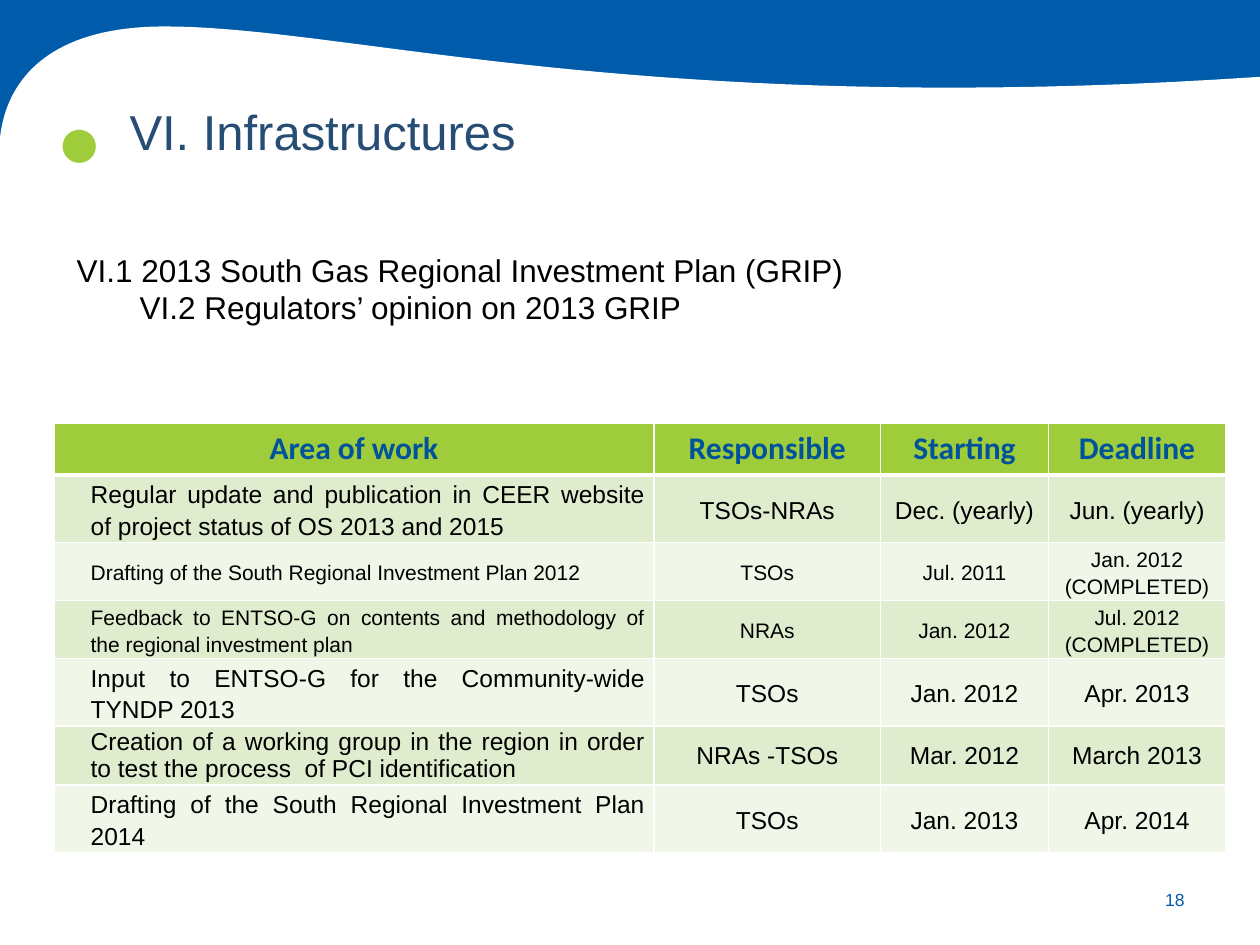
from lxml.etree import SubElement
from pptx import Presentation
from pptx.dml.color import RGBColor
from pptx.enum.shapes import MSO_SHAPE
from pptx.enum.text import MSO_ANCHOR, PP_ALIGN
from pptx.oxml import parse_xml
from pptx.oxml.ns import nsdecls
from pptx.util import Inches, Pt

BLUE, GREEN, WHITE, BLACK = "005BAB", "9ECC3B", "FFFFFF", "000000"
NAVY, HEAD, PALE, MIST = "264D74", "00529B", "DFECCE", "F0F6E8"
COLS, ROWS = 10, 7.5

WIDTHS = [4.76, 1.8, 1.33, 1.41]
TITLES = ["Area of work", "Responsible", "Starting", "Deadline"]
# Text size, line spacing, cell texts
TASKS = [
    (14, 1.15, ["Regular update and publication in CEER website of project status of OS 2013 and 2015",
                "TSOs-NRAs", "Dec. (yearly)", "Jun. (yearly)"]),
    (12, 1.15, ["Drafting of the South Regional Investment Plan 2012",
                "TSOs", "Jul. 2011", "Jan. 2012 (COMPLETED)"]),
    (12, 1.15, ["Feedback to ENTSO-G on contents and methodology of the regional investment plan",
                "NRAs", "Jan. 2012", "Jul. 2012 (COMPLETED)"]),
    (14, 1.15, ["Input to ENTSO-G for the Community-wide TYNDP 2013",
                "TSOs", "Jan. 2012", "Apr. 2013"]),
    (14, 1, ["Creation of a working group in the region in order to test the process  of PCI identification",
             "NRAs -TSOs", "Mar. 2012", "March 2013"]),
    (14, 1.15, ["Drafting of the South Regional Investment Plan 2014",
                "TSOs", "Jan. 2013", "Apr. 2014"]),
]


def color(code):
    return RGBColor.from_string(code)


def curve(start, *bends, steps=40):
    """Sample a chain of cubic bends, each given as two handles and an end."""
    points = [start]
    for bend in bends:
        a, b, c, d = points[-1], *bend
        for i in range(1, steps + 1):
            t = i / steps
            u = 1 - t
            points.append(tuple(u**3 * p + 3 * u * u * t * q + 3 * u * t * t * r + t**3 * s
                                for p, q, r, s in zip(a, b, c, d)))
    return points


class Deck:
    """Style and current slide; lengths are grid columns and rows."""

    def __init__(self, font="Arial"):
        self.font = font
        self.file = Presentation()
        self.file.slide_width, self.file.slide_height = Inches(COLS), Inches(ROWS)
        self.col = self.file.slide_width / COLS
        self.row = self.file.slide_height / ROWS
        self.slide = self.file.slides.add_slide(self.file.slide_layouts[6])
        self.shapes = self.slide.shapes

    def place(self, x, y, w, h):
        return [round(n) for n in (x * self.col, y * self.row, w * self.col, h * self.row)]

    def paint(self, shape, fill):
        shape.shadow.inherit = False
        shape.fill.solid()
        shape.fill.fore_color.rgb = color(fill)
        shape.line.fill.background()

    def band(self, box, fill):
        self.paint(self.shapes.add_shape(MSO_SHAPE.RECTANGLE, *self.place(*box)), fill)

    def outline(self, points, fill):
        # The builder rounds its points to whole units, so scale them first
        spots = [(round(x * self.col), round(y * self.row)) for x, y in points]
        pen = self.shapes.build_freeform(*spots[0])
        pen.add_line_segments(spots[1:], close=True)
        self.paint(pen.convert_to_shape(), fill)

    def style(self, para, size, ink, align, bold=False, font=None):
        para.alignment = align
        for run in para.runs:
            run.font.name = font or self.font
            run.font.size, run.font.bold = Pt(size), bold
            run.font.color.rgb = color(ink)

    def text(self, box, words, size, ink, align=PP_ALIGN.LEFT,
             anchor=MSO_ANCHOR.TOP, wrap=True):
        frame = self.shapes.add_textbox(*self.place(*box)).text_frame
        frame.word_wrap, frame.vertical_anchor = wrap, anchor
        frame.text = words
        for para in frame.paragraphs:
            self.style(para, size, ink, align)
        return frame.paragraphs

    def indent(self, para, left, first=0):
        props = para._p.get_or_add_pPr()
        props.set("marL", str(round(left * self.col)))
        props.set("indent", str(round(first * self.col)))

    def border(self, cell, base):
        """Draw white cell edges, with the bottom one base points wide."""
        props = cell._tc.get_or_add_tcPr()
        for i, side in enumerate("LRTB"):
            width = Pt(base if side == "B" else 1)
            edge = parse_xml(f'<a:ln{side} {nsdecls("a")} w="{width}"/>')
            tag = edge.tag[:edge.tag.index("}") + 1]
            fill = SubElement(edge, tag + "solidFill")
            SubElement(fill, tag + "srgbClr", val=WHITE)
            props.insert(i, edge)

    def cell(self, cell, words, fill, base=1):
        cell.text = words
        cell.fill.solid()
        cell.fill.fore_color.rgb = color(fill)
        self.border(cell, base)
        return cell.text_frame.paragraphs[0]

    def table(self, x, y, widths, height, titles, tasks):
        count = len(tasks) + 1
        box = self.place(x, y, sum(widths), 0.41 * count)
        frame = self.shapes.add_table(count, len(widths), *box)
        grid = frame.table
        for col, width in zip(grid.columns, widths):
            col.width = round(width * self.col)
        for i, title in enumerate(titles):
            para = self.cell(grid.cell(0, i), title, GREEN, base=3)
            self.style(para, 18, HEAD, PP_ALIGN.CENTER, True, "Calibri")
        for r, (size, space, words) in enumerate(tasks, 1):
            for c, word in enumerate(words):
                cell = grid.cell(r, c)
                para = self.cell(cell, word, PALE if r % 2 else MIST)
                cell.vertical_anchor = MSO_ANCHOR.MIDDLE
                cell.margin_left = cell.margin_right = round(0.07 * self.col)
                cell.margin_top = cell.margin_bottom = 0
                self.style(para, size, BLACK, PP_ALIGN.CENTER if c else PP_ALIGN.JUSTIFY)
                para.line_spacing = float(space)
                if c == 0:
                    self.indent(para, 0.22)
        frame.height = round(height * self.row)


def main():
    deck = Deck()
    deck.band((0, 0, COLS, 1.15), BLUE)
    wave = curve((COLS, 0.61),
                 ((5.1, 0.94), (2.76, 0.21), (1.31, 0.21)),
                 ((0.23, 0.21), (0.03, 0.79), (0, 1.1)))
    deck.outline(wave + [(0, ROWS), (COLS, ROWS)], WHITE)

    deck.text((8.94, 6.94, 0.56, 0.4), "18", 10, BLUE, PP_ALIGN.RIGHT, MSO_ANCHOR.MIDDLE)
    deck.text((0.35, 0.57, 0.55, 0.94), "●", 44, GREEN, PP_ALIGN.CENTER,
              MSO_ANCHOR.BOTTOM, wrap=False)
    title = deck.text((0.83, 0.76, 8.75, 0.57), "VI. Infrastructures", 28, NAVY,
                      PP_ALIGN.JUSTIFY)
    deck.indent(title[0], 0.09, 0.01)

    first, second = deck.text((0.51, 1.94, 8.55, 0.71),
                              "VI.1 2013 South Gas Regional Investment Plan (GRIP)\n"
                              "VI.2 Regulators’ opinion on 2013 GRIP", 18, BLACK)
    deck.indent(first, 0.5, -0.5)
    deck.indent(second, 0.5)

    deck.table(0.43, 3.36, WIDTHS, 3.4, TITLES, TASKS)
    deck.file.save("out.pptx")


if __name__ == "__main__":
    main()
